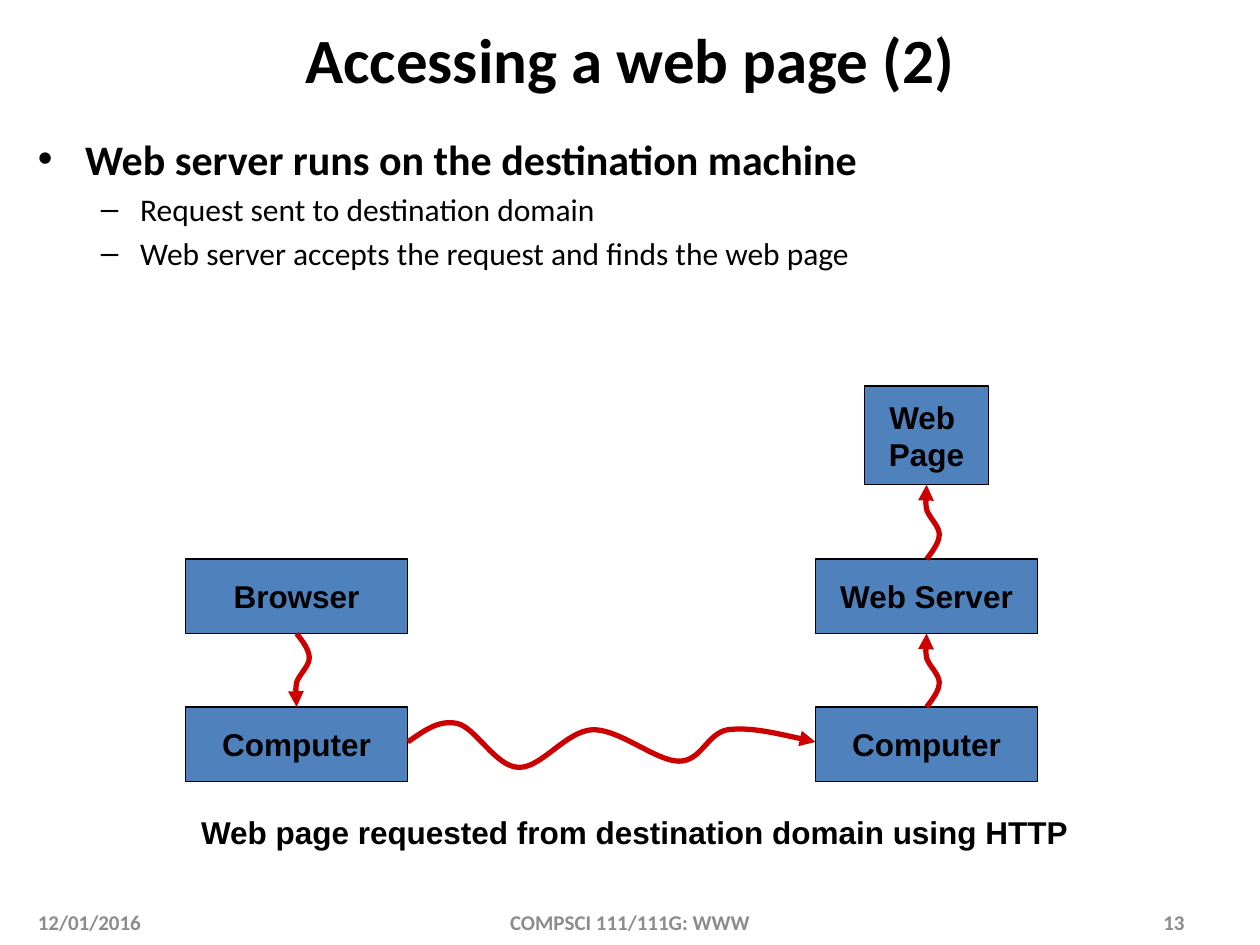
from dataclasses import dataclass

from lxml import etree
from pptx import Presentation
from pptx.dml.color import RGBColor
from pptx.enum.shapes import MSO_SHAPE
from pptx.enum.text import MSO_ANCHOR, PP_ALIGN
from pptx.oxml.ns import qn
from pptx.util import Pt

LEFT, CENTER, RIGHT = PP_ALIGN.LEFT, PP_ALIGN.CENTER, PP_ALIGN.RIGHT
TOP, MIDDLE = MSO_ANCHOR.TOP, MSO_ANCHOR.MIDDLE
RECTANGLE = MSO_SHAPE.RECTANGLE

BLACK, BLUE, RED, GREY = "000000", "4F81BD", "CC0000", "8C8C8C"
BOX_WIDTH, BOX_HEIGHT = 127, 42.5
CLIENT_X, SERVER_X = 106, 466
PROGRAM_Y, COMPUTER_Y = 319.5, 404
SQUIGGLE_OFFSETS = (0, 3.6, 7.2, 7.2, 7.2, 1.5, 0, -0.7, -0.2, 0)
NETWORK_WAVE = [
    (233, 424), (242, 418), (250.5, 411), (261.5, 413.5), (272, 416),
    (283.5, 438.5), (296.5, 438.5), (309.5, 439), (323.5, 417.5), (339, 417),
    (354.5, 417), (375, 435), (388, 435), (401, 435), (404, 419),
    (416, 417), (429, 415.5), (448, 420), (466, 424),
]


@dataclass
class Box:
    label: str
    left: float
    top: float
    width: float = BOX_WIDTH
    height: float = BOX_HEIGHT

    @property
    def middle(self) -> float:
        return self.left + self.width / 2

    @property
    def bottom(self) -> float:
        return self.top + self.height


@dataclass
class Bullet:
    text: str
    mark: str
    size: float
    bold: bool
    level: int
    margin: float
    hanging: float


@dataclass
class Label:
    text: str
    left: float
    top: float
    width: float
    height: float
    size: float
    color: str = BLACK
    font: str = "Calibri"
    align: PP_ALIGN = CENTER
    anchor: MSO_ANCHOR = MIDDLE
    wrap: bool = True


def color_of(hex_color: str) -> RGBColor:
    return RGBColor.from_string(hex_color)


def write(paragraph, text: str, *, size: float, color: str = BLACK,
          font: str = "Calibri", bold: bool = True, align=LEFT) -> None:
    paragraph.text = text
    paragraph.alignment = align
    for run in paragraph.runs:
        run.font.name = font
        run.font.size = Pt(size)
        run.font.bold = bold
        run.font.color.rgb = color_of(color)


def add_label(slide, label: Label) -> None:
    shape = slide.shapes.add_textbox(
        Pt(label.left), Pt(label.top), Pt(label.width), Pt(label.height))
    frame = shape.text_frame
    frame.word_wrap = label.wrap
    frame.vertical_anchor = label.anchor
    write(frame.paragraphs[0], label.text, size=label.size, color=label.color,
          font=label.font, align=label.align)


def add_box(slide, box: Box) -> None:
    shape = slide.shapes.add_shape(
        RECTANGLE, Pt(box.left), Pt(box.top), Pt(box.width), Pt(box.height))
    shape.shadow.inherit = False
    shape.fill.solid()
    shape.fill.fore_color.rgb = color_of(BLUE)
    shape.line.color.rgb = color_of(BLACK)
    shape.line.width = Pt(0.75)
    frame = shape.text_frame
    frame.word_wrap = False
    frame.vertical_anchor = MIDDLE
    write(frame.paragraphs[0], box.label, size=18, font="Arial", align=CENTER)


def add_bullets(slide, bullets: list[Bullet]) -> None:
    shape = slide.shapes.add_textbox(Pt(14.5), Pt(72.5), Pt(691), Pt(430.5))
    frame = shape.text_frame
    frame.word_wrap = True
    for index, bullet in enumerate(bullets):
        paragraph = frame.add_paragraph() if index else frame.paragraphs[0]
        write(paragraph, bullet.text, size=bullet.size, bold=bullet.bold)
        paragraph.level = bullet.level
        paragraph.space_before = Pt(bullet.size * 0.2)
        properties = paragraph._p.get_or_add_pPr()
        properties.set("marL", str(Pt(bullet.margin)))
        properties.set("indent", str(-Pt(bullet.hanging)))
        etree.SubElement(properties, qn("a:buFont"), typeface="Arial")
        etree.SubElement(properties, qn("a:buChar"), char=bullet.mark)


def add_curved_arrow(slide, points: list[tuple[float, float]]) -> None:
    """Draw a Bezier arrow: a start point, then triples of curve points."""
    start, *rest = [(Pt(x), Pt(y)) for x, y in points]
    builder = slide.shapes.build_freeform(*start)
    builder.add_line_segments(rest, close=False)
    shape = builder.convert_to_shape()
    shape.shadow.inherit = False
    shape.fill.background()
    shape.line.color.rgb = color_of(RED)
    shape.line.width = Pt(3)

    properties = shape._element.spPr
    outline = next(properties.iter(qn("a:path")))
    segments = outline.findall(qn("a:lnTo"))
    for first in range(0, len(segments), 3):
        curve = etree.SubElement(outline, qn("a:cubicBezTo"))
        for segment in segments[first:first + 3]:
            curve.append(segment[0])
            outline.remove(segment)
    etree.SubElement(properties.find(qn("a:ln")), qn("a:tailEnd"), type="triangle")


def squiggle(x: float, start_y: float, end_y: float) -> list[tuple[float, float]]:
    """Spread the sideways offsets evenly from start to end."""
    step = (end_y - start_y) / (len(SQUIGGLE_OFFSETS) - 1)
    return [(x + offset, start_y + index * step)
            for index, offset in enumerate(SQUIGGLE_OFFSETS)]


def main() -> None:
    presentation = Presentation()
    presentation.slide_width, presentation.slide_height = Pt(720), Pt(540)
    slide = presentation.slides.add_slide(presentation.slide_layouts[6])

    add_label(slide, Label("Accessing a web page (2)", 7, 8.5, 706, 50, 36))
    add_bullets(slide, [
        Bullet("Web server runs on the destination machine", "•", 24, True, 0, 27, 27),
        Bullet("Request sent to destination domain", "–", 18, False, 1, 58.5, 22.5),
        Bullet("Web server accepts the request and finds the web page", "–",
               18, False, 1, 58.5, 22.5),
    ])

    browser = Box("Browser", CLIENT_X, PROGRAM_Y)
    client = Box("Computer", CLIENT_X, COMPUTER_Y)
    web_server = Box("Web Server", SERVER_X, PROGRAM_Y)
    host = Box("Computer", SERVER_X, COMPUTER_Y)
    web_page = Box("Web \vPage", 494, 220.5, 71, 56.5)
    for box in (browser, client, web_server, host, web_page):
        add_box(slide, box)

    add_curved_arrow(slide, squiggle(browser.middle, browser.bottom, client.top))
    add_curved_arrow(slide, NETWORK_WAVE)
    add_curved_arrow(slide, squiggle(host.middle, host.top, web_server.bottom))
    add_curved_arrow(slide, squiggle(web_server.middle, web_server.top, web_page.bottom))

    add_label(slide, Label("Web page requested from destination domain using HTTP",
                           107.5, 461, 510.5, 29, 18, font="Arial",
                           anchor=TOP, wrap=False))
    for text, left, width, align in (
        ("12/01/2016", 14.5, 168, LEFT),
        ("COMPSCI 111/111G: WWW", 246, 228, CENTER),
        ("13", 516, 168, RIGHT),
    ):
        add_label(slide, Label(text, left, 517, width, 19.5, 12, GREY, align=align))

    presentation.save("out.pptx")


if __name__ == "__main__":
    main()
